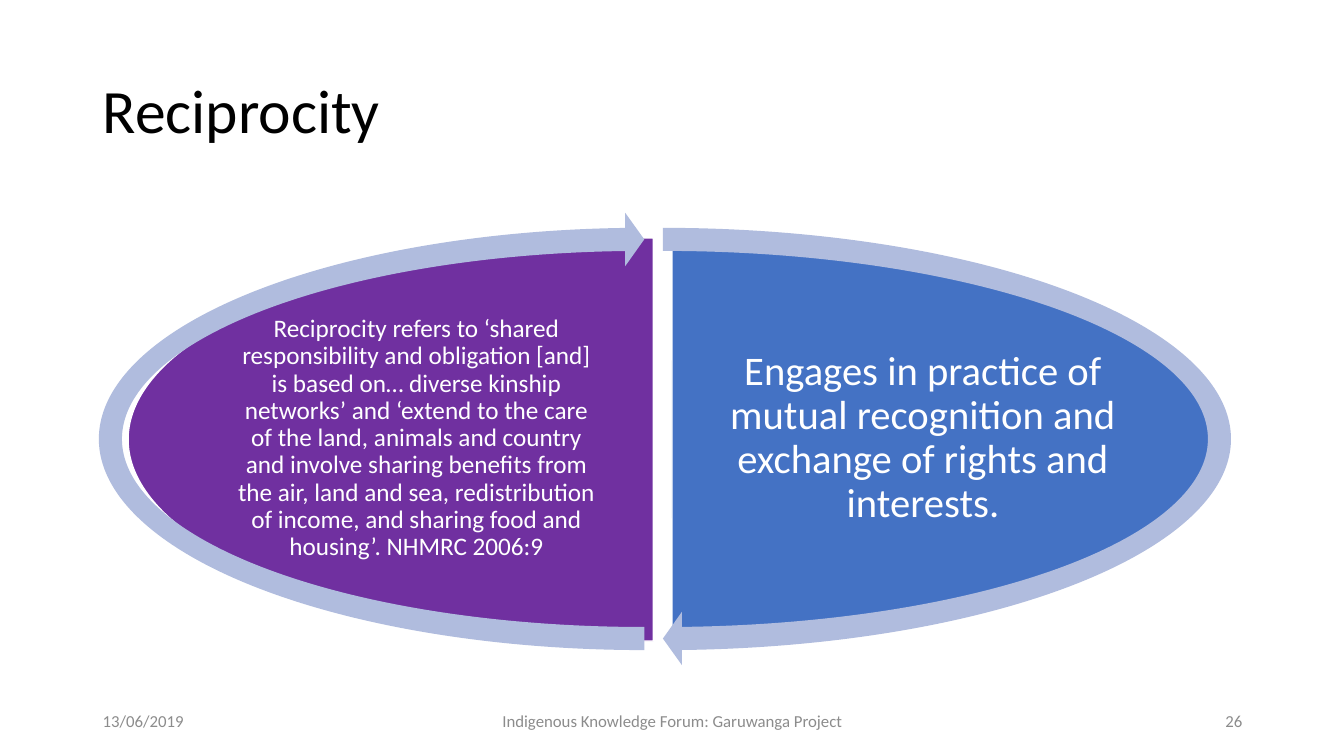
from pptx import Presentation
from pptx.dml.color import RGBColor
from pptx.enum.shapes import MSO_SHAPE
from pptx.enum.text import MSO_ANCHOR, PP_ALIGN
from pptx.util import Inches, Pt

PIE = MSO_SHAPE.PIE
CIRCULAR_ARROW = MSO_SHAPE.CIRCULAR_ARROW
MIDDLE = MSO_ANCHOR.MIDDLE
LEFT, CENTER, RIGHT = PP_ALIGN.LEFT, PP_ALIGN.CENTER, PP_ALIGN.RIGHT
TITLE_ONLY = 5


def write_text(shape, text, size, color, alignment, line_spacing=1.0):
    frame = shape.text_frame
    frame.word_wrap = True
    frame.vertical_anchor = MIDDLE
    frame.text = text
    paragraph = frame.paragraphs[0]
    paragraph.alignment = alignment
    paragraph.line_spacing = line_spacing
    paragraph.font.name = "Calibri"
    paragraph.font.size = Pt(size)
    paragraph.font.color.rgb = RGBColor.from_string(color)
    return frame


def add_filled_shape(kind, box, adjustments, color):
    shape = slide.shapes.add_shape(kind, *map(Inches, box))
    for index, value in enumerate(adjustments):
        shape.adjustments[index] = value
    shape.shadow.inherit = False
    shape.fill.solid()
    shape.fill.fore_color.rgb = RGBColor.from_string(color)
    return shape


presentation = Presentation()
presentation.slide_width = Inches(13.33)
presentation.slide_height = Inches(7.5)
slide = presentation.slides.add_slide(presentation.slide_layouts[TITLE_ONLY])

title = slide.shapes.title
title.left, title.top = Inches(0.92), Inches(0.4)
title.width, title.height = Inches(11.5), Inches(1.45)
write_text(title, "Reciprocity", 44, "000000", LEFT, 0.9)

halves = [
    ((1.13, 2.36, 11.07, 4), (162, 54), "4472C4",
     (7.18, 3.4, 3.95, 1.9), 0.04, 29,
     "Engages in practice of mutual recognition and exchange of rights and interests."),
    ((1.27, 2.36, 10.42, 4), (54, 162), "7030A0",
     (2.27, 3.4, 3.72, 1.9), 0.03, 18,
     "Reciprocity refers to ‘shared responsibility and obligation [and] is based on… "
     "diverse kinship networks’ and ‘extend to the care of the land, animals and country "
     "and involve sharing benefits from the air, land and sea, redistribution of income, "
     "and sharing food and housing’. NHMRC 2006:9"),
]
for pie_box, angles, color, text_box, inset, size, text in halves:
    pie = add_filled_shape(PIE, pie_box, angles, color)
    pie.line.color.rgb = RGBColor.from_string("FFFFFF")
    pie.line.width = Pt(1)
    label = slide.shapes.add_textbox(*map(Inches, text_box))
    frame = write_text(label, text, size, "FFFFFF", CENTER, 0.9)
    frame.margin_left = frame.margin_right = Inches(inset)
    frame.margin_top = frame.margin_bottom = Inches(inset)

arrows = [
    ((0.79, 2.11, 11.57, 4.49), 50.725, 162),
    ((0.83, 2.11, 11.12, 4.49), 158.725, 54),
]
for box, head_angle, tail_angle in arrows:
    arrow = add_filled_shape(
        CIRCULAR_ARROW, box, (0.051, 3.275, head_angle, tail_angle, 0.059), "B0BCDE")
    arrow.line.fill.background()

footers = [
    (0.92, 3, "13/06/2019", LEFT),
    (4.42, 4.5, "Indigenous Knowledge Forum: Garuwanga Project", CENTER),
    (9.42, 3, "26", RIGHT),
]
for left, width, text, alignment in footers:
    footer = slide.shapes.add_textbox(Inches(left), Inches(6.95), Inches(width), Inches(0.4))
    write_text(footer, text, 12, "8C8C8C", alignment)

presentation.save("out.pptx")
